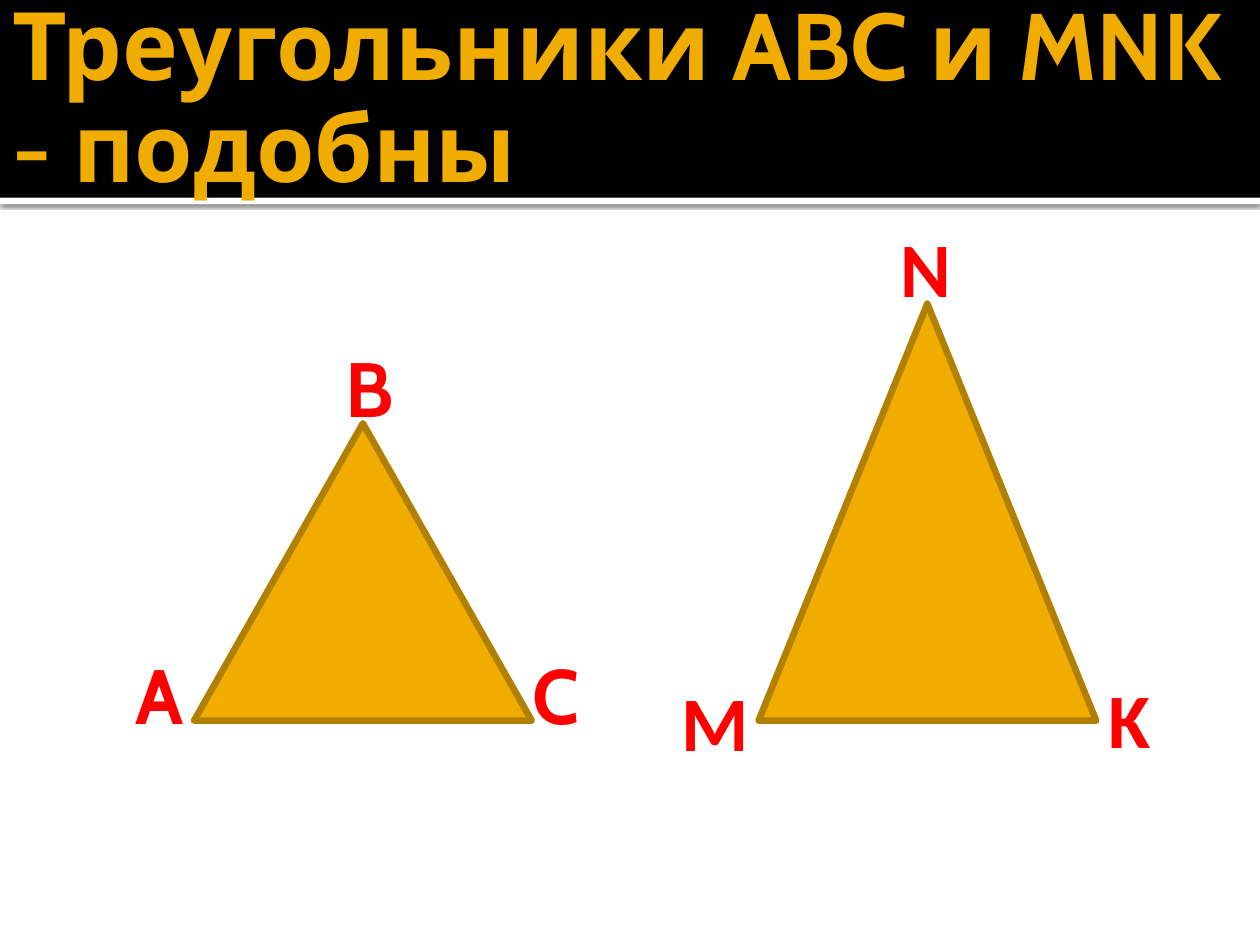
"""Build a slide showing two similar triangles with named vertices."""
from lxml.etree import SubElement as Sub
from pptx import Presentation
from pptx.dml.color import RGBColor as RGB
from pptx.enum.shapes import MSO_SHAPE as Form
from pptx.enum.text import MSO_ANCHOR as Anchor, MSO_AUTO_SIZE as Fit, PP_ALIGN as Align
from pptx.oxml.ns import qn
from pptx.util import Inches, Pt

TITLE = "Треугольники ABC и MNK - подобны"
BARS = [((0, 1.57, 10, 0.05), "white"), ((0, 0, 10, 1.57), "black")]
BASE, WIDTH = 5.72, 2.68
TRIOS = [(1.54, 2.36), (6.02, 3.31)]
MARKS = [
    ("B", 2.64, 2.65, 0.47, "head"),
    ("C", 4.13, 5.09, 0.53, "head"),
    ("A", 0.98, 5.09, 0.6, "head"),
    ("M", 5.31, 5.3, 1.34, "body"),
    ("N", 7.05, 1.7, 1.02, "body"),
    ("K", 8.7, 5.28, 0.87, "body"),
]
THEME = {
    "white": RGB(255, 255, 255), "black": RGB(0, 0, 0),
    "gold": RGB(0xF0, 0xAD, 0), "edge": RGB(0xB2, 0x80, 0), "red": RGB(255, 0, 0),
    "head": "Cabin", "body": "Calibri", "title": 54, "mark": 44, "line": 3.78,
}


def write(shape, text, font="head", size="mark", color="red", anchor=Anchor.TOP,
          right=0.1, space=None):
    frame = shape.text_frame
    frame.word_wrap, frame.auto_size = True, Fit.NONE
    frame.vertical_anchor = anchor
    frame.margin_left, frame.margin_right = Inches(0.1), Inches(right)
    frame.margin_top = frame.margin_bottom = Inches(0.05)
    frame.text = text
    par = frame.paragraphs[0]
    par.alignment, par.line_spacing = Align.LEFT, space
    face = par.runs[0].font
    face.name, face.size, face.bold = THEME[font], Pt(THEME[size]), True
    face.color.rgb = THEME[color]


def draw(slide, form, box, fill, edge=None):
    shape = slide.shapes.add_shape(form, *map(Inches, box))
    shape.shadow.inherit = False
    shape.fill.solid()
    shape.fill.fore_color.rgb = THEME[fill]
    if edge:
        shape.line.color.rgb = THEME[edge]
        shape.line.width = Pt(THEME["line"])
    else:
        shape.line.fill.background()
    return shape


def shade(shape):
    list_ = shape.element.spPr.find(qn("a:effectLst"))
    cast = Sub(list_, qn("a:outerShdw"), blurRad=str(Pt(2.5)), dist=str(Pt(0.8)),
               dir="5400000", algn="t", rotWithShape="0")
    tint = Sub(cast, qn("a:srgbClr"), val=str(THEME["black"]))
    Sub(tint, qn("a:alpha"), val="60000")


def main():
    deck = Presentation()
    deck.slide_width, deck.slide_height = Inches(10), Inches(7.5)
    slide = deck.slides.add_slide(deck.slide_layouts[5])
    title = slide.shapes.title
    title.left, title.top, title.width, title.height = map(Inches, (0, 0.21, 10, 1.18))
    write(title, TITLE, size="title", color="gold", anchor=Anchor.MIDDLE, right=0.05,
          space=0.9)
    bars = [draw(slide, Form.RECTANGLE, box, fill) for box, fill in BARS]
    shade(bars[0])
    for bar in bars:
        title.element.addprevious(bar.element)
    for left, high in TRIOS:
        draw(slide, Form.ISOSCELES_TRIANGLE, (left, BASE - high, WIDTH, high),
             "gold", "edge")
    for text, left, top, wide, font in MARKS:
        box = slide.shapes.add_textbox(*map(Inches, (left, top, wide, 0.84)))
        anchor = Anchor.TOP if font == "head" else Anchor.MIDDLE
        write(box, text, font=font, anchor=anchor)
    deck.save("out.pptx")


if __name__ == "__main__":
    main()
